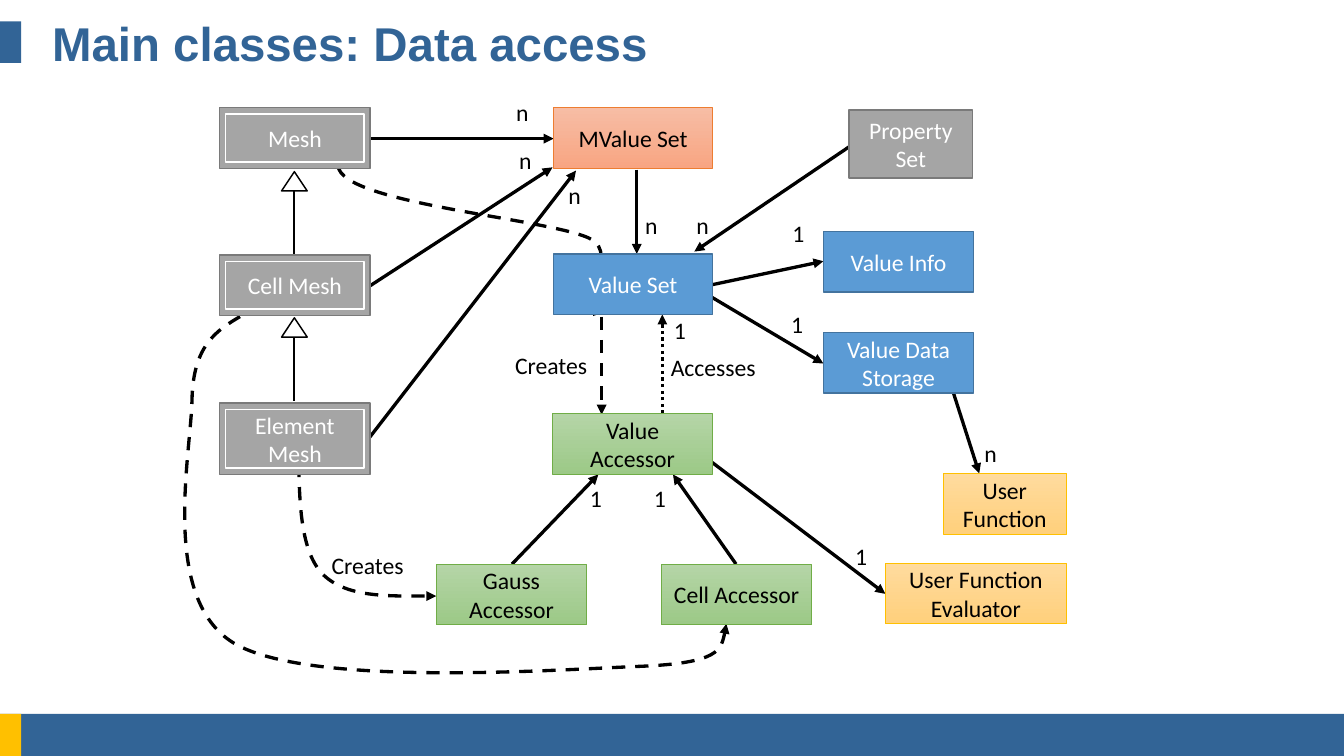
from lxml.etree import SubElement
from pptx import Presentation
from pptx.dml.color import RGBColor
from pptx.enum.dml import MSO_LINE
from pptx.enum.shapes import MSO_CONNECTOR, MSO_SHAPE
from pptx.enum.text import MSO_ANCHOR, MSO_AUTO_SIZE, PP_ALIGN
from pptx.oxml.ns import qn
from pptx.util import Pt

deck = Presentation()
deck.slide_width, deck.slide_height = Pt(907.2), Pt(510.5)
slide = deck.slides.add_slide(deck.slide_layouts[6])
shapes = slide.shapes
rgb = RGBColor.from_string


def draw(kind, spot, fill=None, edge=None, weight=1):
    shape = shapes.add_shape(kind, *map(Pt, spot))
    shape.shadow.inherit = False
    if fill is None:
        shape.fill.background()
    elif isinstance(fill, tuple):
        shape.fill.gradient()
        shape.fill.gradient_angle = 270
        for stop, tone in zip(shape.fill.gradient_stops, fill):
            stop.color.rgb = rgb(tone)
    else:
        shape.fill.solid()
        shape.fill.fore_color.rgb = rgb(fill)
    if edge:
        shape.line.color.rgb = rgb(edge)
        shape.line.width = Pt(weight)
    else:
        shape.line.fill.background()
    return shape


def write(shape, text, tone="000000", size=16, face="Calibri", bold=False):
    frame = shape.text_frame
    frame.text = text
    font = frame.paragraphs[0].runs[0].font
    font.size, font.name, font.bold = Pt(size), face, bold
    font.color.rgb = rgb(tone)
    return frame


BLUE = "326496"
for spot, fill in [
    ((0, 482, 907.2, 28.5), BLUE),
    ((0, 482, 14.4, 28.5), "FFC000"),
    ((0, 14.4, 14.4, 28.1), BLUE),
]:
    draw(MSO_SHAPE.RECTANGLE, spot, fill)

title = shapes.add_textbox(Pt(28.1), Pt(14.4), Pt(850.3), Pt(28.1))
frame = write(title, "Main classes: Data access", BLUE, 32, "Arial", True)
frame.word_wrap = True
frame.vertical_anchor = MSO_ANCHOR.MIDDLE

strokes = []
curves = [
    [(228.2, 111.6), (229, 139), (385.9, 148.3), (401.8, 163.4),
     (416.9, 178.6), (377.3, 210.2), (407.5, 211)],
    [(201.6, 313.2), (202.3, 340.6), (203, 373), (218.2, 388.1),
     (234, 403.2), (264.2, 402.5), (294.5, 402.5)],
    [(162, 213.8), (146.2, 223.2), (130.3, 233.3), (129.6, 270),
     (128.9, 306.7), (108, 403.9), (157.7, 434.2),
     (208.1, 464.4), (375.8, 452.2), (431.3, 450),
     (486.7, 447.8), (488.2, 434.9), (490.3, 421.2)],
]
for curve in curves:
    dots = [(Pt(x), Pt(y)) for x, y in curve]
    pen = shapes.build_freeform(*dots[0])
    pen.add_line_segments(dots[1:], close=False)
    shape = pen.convert_to_shape()
    shape.fill.background()
    steps = list(shape.element.iter(qn("a:lnTo")))
    for i in range(0, len(steps), 3):
        bend = SubElement(steps[i].getparent(), qn("a:cubicBezTo"))
        for step in steps[i:i + 3]:
            bend.append(step[0])
            step.getparent().remove(step)
    strokes.append((shape, MSO_LINE.DASH, 2.25))

for ends, dash, weight in [
    ((249.8, 93.6, 373.7, 93.6), None, 2.25),
    ((249.8, 193, 373, 113), None, 2.25),
    ((249.1, 295.9, 388.8, 115.2), None, 2.25),
    ((429.8, 114.5, 429.8, 171.4), None, 2.25),
    ((576, 97.2, 468.7, 169.9), None, 2.25),
    ((481, 192.2, 555.8, 176.4), None, 2.25),
    ((460.1, 188.6, 555.8, 245.5), None, 2.25),
    ((643.7, 265.7, 661, 319.7), None, 2.25),
    ((460.1, 296.6, 597.6, 401), None, 2.25),
    ((496.8, 380.9, 454.3, 320.4), None, 2.25),
    ((345.6, 380.9, 403.9, 320.4), None, 2.25),
    ((447.1, 279.4, 447.1, 212.4), MSO_LINE.ROUND_DOT, 2.25),
    ((406.1, 213.8, 406.1, 280), MSO_LINE.DASH, 2.25),
    ((198.7, 172.1, 198.7, 128.9), None, 1.5),
    ((198.7, 270.7, 198.7, 227.5), None, 1.5),
]:
    link = shapes.add_connector(MSO_CONNECTOR.STRAIGHT, *map(Pt, ends))
    strokes.append((link, dash, weight))

for shape, dash, weight in strokes:
    shape.line.color.rgb = rgb("000000")
    shape.line.width = Pt(weight)
    if dash:
        shape.line.dash_style = dash
    if weight > 2:
        trim = shape.element.spPr.find(qn("a:ln"))
        SubElement(trim, qn("a:tailEnd"), type="triangle")
    SubElement(shape.element.spPr, qn("a:effectLst"))

for top in (115.9, 214.6):
    draw(MSO_SHAPE.ISOSCELES_TRIANGLE, (190.1, top, 17.3, 13), "FFFFFF", "000000")

GRAY = ("A5A5A5", "7A7A7A", 1, "FFFFFF")
SKY = ("5B9BD5", "43739E", 1, "FFFFFF")
CORAL = (("F7BDA5", "F8A582"), "ED7D31", 0.5, "000000")
GREEN = (("B5D5A7", "9CC987"), "70AD47", 0.5, "000000")
GOLD = (("FFDB9E", "FFD07C"), "FFC000", 0.5, "000000")
for text, spot, (fill, edge, weight, tone) in [
    ("Mesh", (148.3, 72.7, 101.5, 41), GRAY),
    ("Cell Mesh", (148.3, 172.1, 101.5, 41), GRAY),
    ("Element Mesh", (148.3, 272.2, 101.5, 48.2), GRAY),
    ("Property Set", (573.1, 74.2, 83.5, 46.1), GRAY),
    ("MValue Set", (373.7, 72.7, 107.3, 41), CORAL),
    ("Value Set", (373.7, 171.4, 107.3, 41), SKY),
    ("Value Info", (555.8, 156.2, 101.5, 41), SKY),
    ("Value Data Storage", (555.8, 224.6, 101.5, 41), SKY),
    ("Value Accessor", (373, 279.4, 108, 41), GREEN),
    ("Gauss Accessor", (294.5, 380.9, 101.5, 41), GREEN),
    ("Cell Accessor", (446.4, 380.9, 101.5, 41), GREEN),
    ("User Function", (636.5, 319.7, 83.5, 41), GOLD),
    ("User Function Evaluator", (597.6, 380.2, 122.4, 41), GOLD),
]:
    box = draw(MSO_SHAPE.RECTANGLE, spot, fill, edge, weight)
    frame = write(box, text, tone)
    frame.word_wrap = True
    frame.vertical_anchor = MSO_ANCHOR.MIDDLE
    frame.paragraphs[0].alignment = PP_ALIGN.CENTER
    if text.endswith("Mesh"):
        left, top, width, height = spot
        inner = (left + 4, top + 4.3, width - 8, height - 8.6)
        draw(MSO_SHAPE.RECTANGLE, inner, None, "FFFFFF")

for text, width, spots in [
    ("n", 23, [(341.3, 62.6), (343.4, 95), (376.6, 118.8),
               (428.4, 139), (463, 139), (657.4, 293)]),
    ("1", 23, [(527.8, 144), (447.8, 209.5), (391, 323.3),
               (434.2, 323.3), (527, 205.9), (570.2, 362.2)]),
    ("Creates", 64.1, [(216.7, 368.6), (340.6, 233.3)]),
    ("Accesses", 72.7, [(445.7, 234.7)]),
]:
    for left, top in spots:
        label = shapes.add_textbox(Pt(left), Pt(top), Pt(width), Pt(26.6))
        frame = write(label, text)
        frame.word_wrap = False
        frame.auto_size = MSO_AUTO_SIZE.SHAPE_TO_FIT_TEXT

deck.save("out.pptx")
